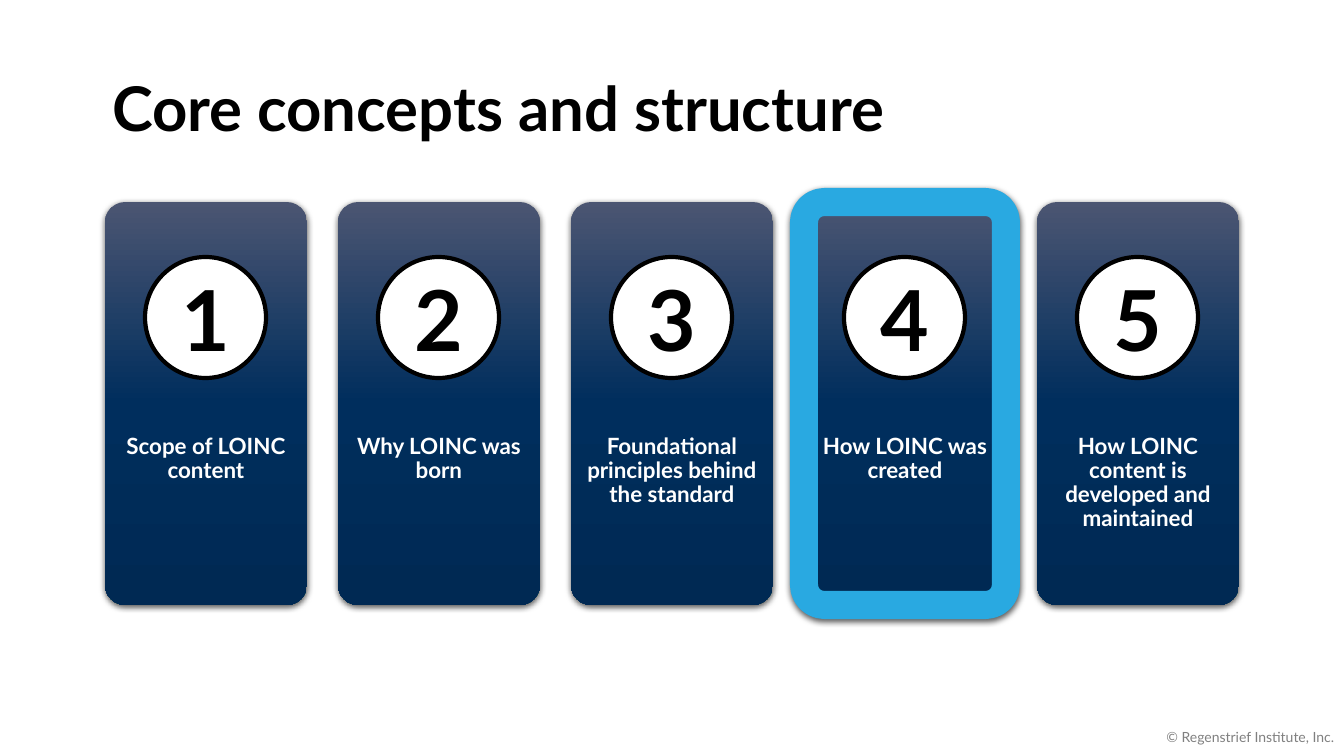
from copy import deepcopy

from lxml.etree import SubElement
from pptx import Presentation
from pptx.dml.color import RGBColor
from pptx.enum.shapes import MSO_SHAPE as Shape
from pptx.enum.text import MSO_ANCHOR as Anchor, MSO_AUTO_SIZE as AutoSize, PP_ALIGN as Align
from pptx.oxml.ns import qn
from pptx.util import Pt

EMU_PER_PX = 914400 / 100.8
COLORS = {
    "black": "000000",
    "white": "FFFFFF",
    "highlight": "29A9E1",
    "footer": "808080",
}
CARD_GRADIENT = [(0, "4B5572"), (0.5, "002E5D"), (1, "002953")]
TOPICS = [
    "Scope of LOINC content",
    "Why LOINC was born",
    "Foundational principles behind the standard",
    "How LOINC was created",
    "How LOINC content is developed and maintained",
]
CURRENT_TOPIC = 4
CARD_LEFT, CARD_TOP, CARD_STEP = 105, 202, 233
CARD_WIDTH, CARD_HEIGHT = 202, 403
BADGE_TOP, BADGE_SIZE = 257, 121


def px(*lengths):
    return [round(length * EMU_PER_PX) for length in lengths]


def rgb(name):
    return RGBColor.from_string(COLORS[name])


def set_attributes(target, values):
    for name, value in values.items():
        setattr(target, name, value)


def write_text(frame, text, size, color, align, bold=True, spacing=1.0, anchor=Anchor.MIDDLE, margins=None):
    """Fill a text frame; margins are left, top, right, bottom in px."""
    set_attributes(frame, {"word_wrap": True, "auto_size": AutoSize.NONE, "vertical_anchor": anchor})
    if margins:
        sides = ("margin_left", "margin_top", "margin_right", "margin_bottom")
        set_attributes(frame, dict(zip(sides, px(*margins))))
    frame.text = text
    paragraph = frame.paragraphs[0]
    set_attributes(paragraph, {"alignment": align, "line_spacing": spacing})
    font = paragraph.runs[0].font
    set_attributes(font, {"name": "Lato", "size": Pt(size), "bold": bold})
    font.color.rgb = rgb(color)


def apply_gradient(shape):
    shape.fill.gradient()
    shape.fill.gradient_angle = 270
    stop_list = shape._element.spPr.find(qn("a:gradFill")).find(qn("a:gsLst"))
    stop_list.append(deepcopy(stop_list[-1]))
    for stop, (position, color) in zip(shape.fill.gradient_stops, CARD_GRADIENT):
        stop.position = position
        stop.color.rgb = RGBColor.from_string(color)


def apply_shadow(shape):
    shape.shadow.inherit = False
    effects = shape._element.spPr.find(qn("a:effectLst"))
    shadow = SubElement(effects, qn("a:outerShdw"), blurRad=str(Pt(4.5)), dist=str(Pt(1.5)),
                        dir="5400000", algn="ctr", rotWithShape="0")
    color = SubElement(shadow, qn("a:srgbClr"), val=COLORS["black"])
    SubElement(color, qn("a:alpha"), val="63000")


def set_line(shape, color, width):
    shape.line.color.rgb = rgb(color)
    shape.line.width = Pt(width)


def add_title(slide, text):
    title = slide.shapes.title
    set_attributes(title, dict(zip(("left", "top", "width", "height"), px(102, 39, 1159, 146))))
    write_text(title.text_frame, text, 44, "black", Align.LEFT, spacing=0.9)


def add_card(slide, left, topic, highlighted):
    card = slide.shapes.add_shape(Shape.ROUNDED_RECTANGLE, *px(left, CARD_TOP, CARD_WIDTH, CARD_HEIGHT))
    card.adjustments[0] = 0.1
    apply_gradient(card)
    apply_shadow(card)
    if highlighted:
        set_line(card, "highlight", 20)
    else:
        card.line.fill.background()
    write_text(card.text_frame, topic, 16, "white", Align.CENTER, spacing=0.9,
               anchor=Anchor.TOP, margins=(9, 227, 9, 9))


def add_badge(slide, card_left, number):
    left = card_left + (CARD_WIDTH - BADGE_SIZE) // 2
    badge = slide.shapes.add_shape(Shape.OVAL, *px(left, BADGE_TOP, BADGE_SIZE, BADGE_SIZE))
    badge.shadow.inherit = False
    badge.fill.solid()
    badge.fill.fore_color.rgb = rgb("white")
    set_line(badge, "black", 3)
    write_text(badge.text_frame, str(number), 60, "black", Align.CENTER, margins=(0, 0, 0, 0))


def add_footer(slide, text):
    footer = slide.shapes.add_textbox(*px(1041, 717, 303, 40))
    write_text(footer.text_frame, text, 10, "footer", Align.RIGHT, bold=False)


def main():
    presentation = Presentation()
    presentation.slide_width, presentation.slide_height = px(1344, 756)
    slide = presentation.slides.add_slide(presentation.slide_layouts[5])

    add_title(slide, "Core concepts and structure")
    for number, topic in enumerate(TOPICS, start=1):
        left = CARD_LEFT + (number - 1) * CARD_STEP
        add_card(slide, left, topic, number == CURRENT_TOPIC)
        add_badge(slide, left, number)
    add_footer(slide, "© Regenstrief Institute, Inc.")

    presentation.save("out.pptx")


if __name__ == "__main__":
    main()
